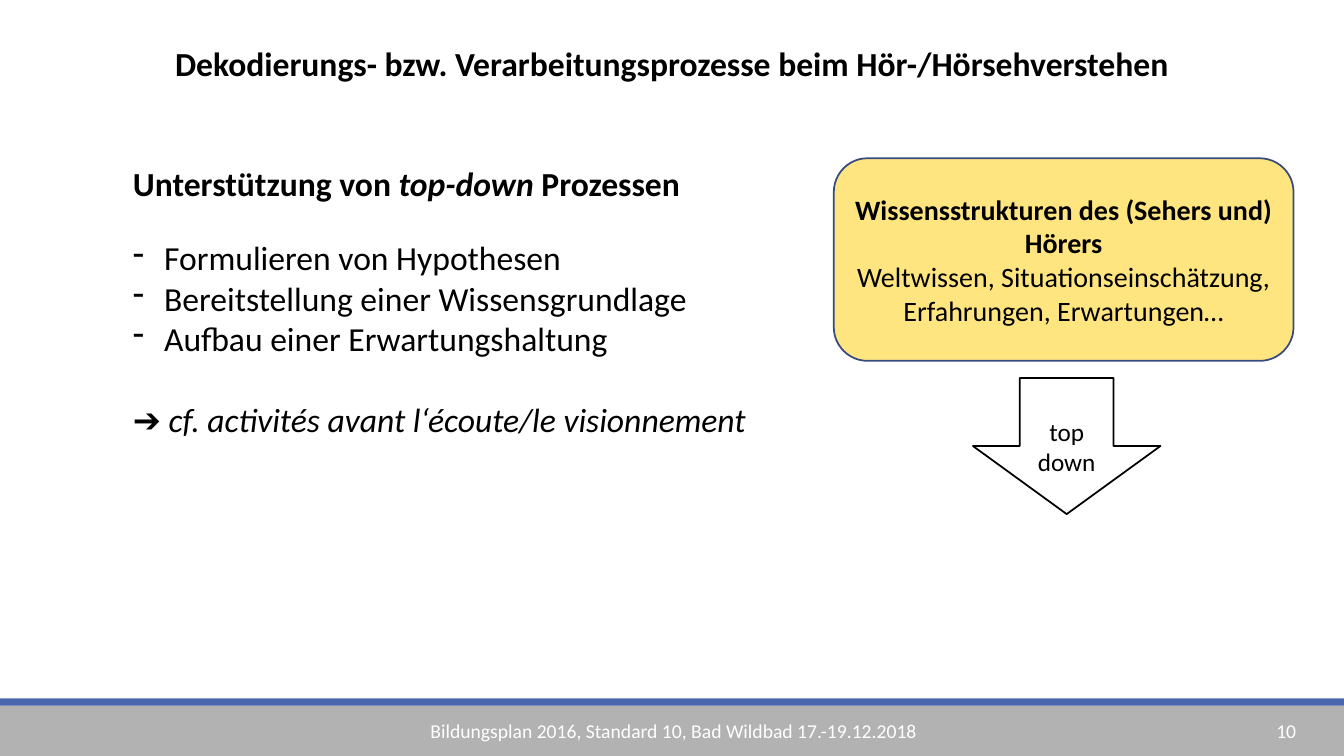
from dataclasses import dataclass

from lxml.etree import SubElement
from pptx import Presentation
from pptx.dml.color import RGBColor
from pptx.enum.shapes import MSO_SHAPE as Shape
from pptx.enum.text import MSO_ANCHOR as Anchor, PP_ALIGN as Align
from pptx.oxml.ns import qn
from pptx.util import Inches, Pt


@dataclass(frozen=True)
class Theme:
    font: str = "Calibri"
    black: str = "000000"
    white: str = "FFFFFF"
    footer: str = "B2B2B2"
    accent: str = "4A66AC"
    outline: str = "374B7F"
    knowledge: str = "FFCC00"
    large: int = 24
    medium: int = 20
    label: int = 18
    small: int = 14
    line: float = 1.25


THEME = Theme()


def write(p, text, size=THEME.large, color=THEME.black, bold=False,
          italic=False, align=None, before=0, bullet=None):
    """Append a formatted run and set the format of its paragraph."""
    r = p.add_run()
    r.text = text
    r.font.name, r.font.size = THEME.font, Pt(size)
    r.font.bold, r.font.italic = bold, italic
    r.font.color.rgb = RGBColor.from_string(color)
    if align is not None:
        p.alignment = align
    if before:
        p.space_before = Pt(before)
    if bullet:
        props = p._p.get_or_add_pPr()
        indent = Inches(0.31)
        props.set("marL", str(indent))
        props.set("indent", str(-indent))
        SubElement(props, qn("a:buChar"), char=bullet)


def next_paragraph(tf):
    first = tf.paragraphs[0]
    return tf.add_paragraph() if first.runs else first


def set_frame(tf, anchor=Anchor.TOP, side=0.1, top=0.05, bottom=0.05):
    tf.word_wrap = True
    tf.vertical_anchor = anchor
    tf.margin_left = tf.margin_right = Inches(side)
    tf.margin_top, tf.margin_bottom = Inches(top), Inches(bottom)
    return tf


def add_text_box(slide, *box):
    sp = slide.shapes.add_textbox(*map(Inches, box))
    return set_frame(sp.text_frame)


def add_shape(slide, kind, *box, fill=None, alpha=None, line=None):
    sp = slide.shapes.add_shape(kind, *map(Inches, box))
    sp.shadow.inherit = False
    if fill:
        sp.fill.solid()
        sp.fill.fore_color.rgb = RGBColor.from_string(fill)
        if alpha:
            color = sp.fill._xPr.find(".//" + qn("a:srgbClr"))
            SubElement(color, qn("a:alpha"), val=str(alpha * 1000))
    else:
        sp.fill.background()
    if line:
        sp.line.color.rgb = RGBColor.from_string(line)
        sp.line.width = Pt(THEME.line)
    else:
        sp.line.fill.background()
    return sp


def add_title(slide, text):
    sp = slide.shapes.title
    sp.left, sp.top, sp.width, sp.height = map(Inches, (0.85, 0.38, 11.63, 0.81))
    tf = set_frame(sp.text_frame)
    write(tf.paragraphs[0], text, bold=True, align=Align.CENTER)


def add_footer(slide, text, number):
    add_shape(slide, Shape.RECTANGLE, 0, 7, 13.33, 0.5, fill=THEME.footer)
    add_shape(slide, Shape.RECTANGLE, 0, 6.93, 13.33, 0.07, fill=THEME.accent)
    for left, width, words in ((4.17, 5.53, text), (12.56, 0.82, number)):
        tf = add_text_box(slide, left, 7.08, width, 0.34)
        write(tf.paragraphs[0], words, size=THEME.small, color=THEME.white)


def add_support_list(slide):
    tf = add_text_box(slide, 1.22, 1.57, 6.54, 3.57)
    heading = next_paragraph(tf)
    write(heading, "Unterstützung von ", bold=True)
    write(heading, "top-down ", bold=True, italic=True)
    write(heading, "Prozessen", bold=True)
    goals = ("Formulieren von Hypothesen",
             "Bereitstellung einer Wissensgrundlage",
             "Aufbau einer Erwartungshaltung")
    for i, goal in enumerate(goals):
        write(next_paragraph(tf), goal, bullet="-", before=0 if i else 24)
    reference = next_paragraph(tf)
    write(reference, "➔ ", before=29)
    write(reference, "cf. activités avant l‘écoute/le visionnement", italic=True)


def add_knowledge_box(slide):
    sp = add_shape(slide, Shape.ROUNDED_RECTANGLE, 8.27, 1.57, 4.56, 2.01,
                   fill=THEME.knowledge, alpha=50, line=THEME.outline)
    tf = set_frame(sp.text_frame, Anchor.MIDDLE, side=0.03)
    for text, bold in (
            ("Wissensstrukturen des (Sehers und) Hörers", True),
            ("Weltwissen, Situationseinschätzung, Erfahrungen, Erwartungen…", False)):
        write(next_paragraph(tf), text, size=THEME.medium, bold=bold,
              align=Align.CENTER)


def add_down_arrow(slide):
    sp = add_shape(slide, Shape.DOWN_ARROW, 9.65, 3.75, 1.86, 1.35,
                   line=THEME.black)
    # The top margin lowers the label to the middle of the whole arrow
    tf = set_frame(sp.text_frame, Anchor.MIDDLE, side=0, top=0.34, bottom=0)
    for word in ("top", "down"):
        write(next_paragraph(tf), word, size=THEME.label, align=Align.CENTER)


def main():
    prs = Presentation()
    prs.slide_width, prs.slide_height = Inches(13.33), Inches(7.5)
    slide = prs.slides.add_slide(prs.slide_layouts[5])

    # Title and footer
    add_title(slide, "Dekodierungs- bzw. Verarbeitungsprozesse beim "
                     "Hör-/Hörsehverstehen")
    add_footer(slide, "Bildungsplan 2016, Standard 10, Bad Wildbad "
                      "17.-19.12.2018", "10")

    # Support measures on the left, top-down diagram on the right
    add_support_list(slide)
    add_knowledge_box(slide)
    add_down_arrow(slide)

    prs.save("out.pptx")


if __name__ == "__main__":
    main()
